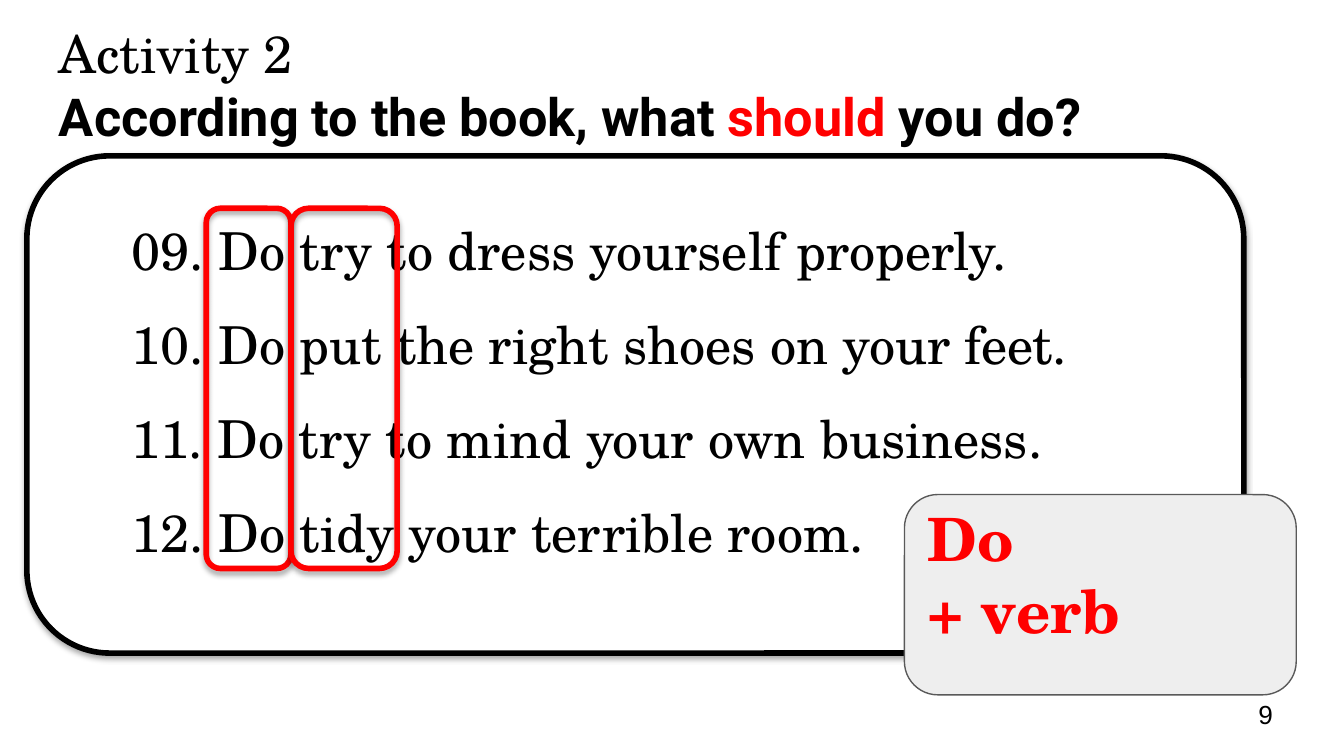
from lxml.etree import SubElement
from pptx import Presentation
from pptx.dml.color import RGBColor
from pptx.enum.shapes import MSO_SHAPE
from pptx.enum.text import MSO_ANCHOR, PP_ALIGN
from pptx.oxml.ns import qn
from pptx.util import Pt

PX = 4572
HUE = {"ink": "000000", "red": "FF0000", "paper": "FFFFFF", "grey": "EEEEEE", "edge": "595959"}
SERIF = "TeX Gyre Schola"

HEAD = "Activity 2"
ASK = [("According to the book, what ", "ink"), ("should ", "red"), ("you do?", "ink")]
RULES = [
    "Do try to dress yourself properly.",
    "Do put the right shoes on your feet.",
    "Do try to mind your own business.",
    "Do tidy your terrible room.",
]
FIRST = 9
HINT = ["Do", "+ verb"]
PAGE = "9"

MARK = {"left": 307, "top": 310, "height": 536, "widths": [126, 158]}


def color(name):
    return RGBColor.from_string(HUE[name])


def style(font, size, face, hue, bold=False):
    font.size, font.name, font.bold = Pt(size), face, bold
    font.color.rgb = color(hue)


def setup(frame, pad, anchor):
    frame.word_wrap = True
    frame.vertical_anchor = anchor
    frame.margin_left = frame.margin_right = 20 * PX
    frame.margin_top = frame.margin_bottom = pad * PX
    return frame


def label(slide, box, anchor=MSO_ANCHOR.TOP):
    shape = slide.shapes.add_textbox(*[n * PX for n in box])
    return setup(shape.text_frame, 20, anchor)


def panel(slide, box, fill, line, width):
    shape = slide.shapes.add_shape(MSO_SHAPE.ROUNDED_RECTANGLE, *[n * PX for n in box])
    shape.shadow.inherit = False
    if fill:
        shape.fill.solid()
        shape.fill.fore_color.rgb = color(fill)
    else:
        shape.fill.background()
    shape.line.color.rgb = color(line)
    shape.line.width = Pt(width)
    return shape


def shade(shape):
    effects = shape._element.spPr.find(qn("a:effectLst"))
    outer = SubElement(effects, qn("a:outerShdw"), blurRad=str(Pt(3.1)), dist=str(Pt(1.8)),
                       dir="5400000", rotWithShape="0")
    tint = SubElement(outer, qn("a:srgbClr"), val=HUE["ink"])
    SubElement(tint, qn("a:alpha"), val="35000")


def write(frame, lines, size, hue, bold=False, space=None, indent=0):
    for i, line in enumerate(lines):
        para = frame.add_paragraph() if i else frame.paragraphs[0]
        para.text = line
        para.alignment = PP_ALIGN.LEFT
        para.line_spacing = space
        if indent:
            para._p.get_or_add_pPr().set("marL", str(indent * PX))
        style(para.font, size, SERIF, hue, bold)


def main():
    deck = Presentation()
    deck.slide_width, deck.slide_height = 2000 * PX, 1125 * PX
    slide = deck.slides.add_slide(deck.slide_layouts[6])

    title = label(slide, (68, 12, 1864, 126)).paragraphs[0]
    run = title.add_run()
    run.text = HEAD
    style(run.font, 28, SERIF, "ink")
    title.add_line_break()
    for text, hue in ASK:
        run = title.add_run()
        run.text = text
        style(run.font, 28, "Roboto", hue, True)

    page = label(slide, (1853, 1020, 120, 86), MSO_ANCHOR.MIDDLE).paragraphs[0]
    page.text = PAGE
    style(page.font, 14, "Arial", "ink")

    board = panel(slide, (40, 232, 1811, 740), "paper", "ink", 3)
    shade(board)
    lines = [f"{n:02}. {rule}" for n, rule in enumerate(RULES, FIRST)]
    write(setup(board.text_frame, 10, MSO_ANCHOR.TOP), lines, 28, "ink", space=1.5, indent=100)

    left = MARK["left"]
    for width in MARK["widths"]:
        shade(panel(slide, (left, MARK["top"], width, MARK["height"]), None, "red", 3))
        left += width

    note = panel(slide, (1346, 736, 583, 298), "grey", "edge", 0.75)
    write(setup(note.text_frame, -4, MSO_ANCHOR.TOP), HINT, 32, "red", bold=True)

    deck.save("out.pptx")


if __name__ == "__main__":
    main()
